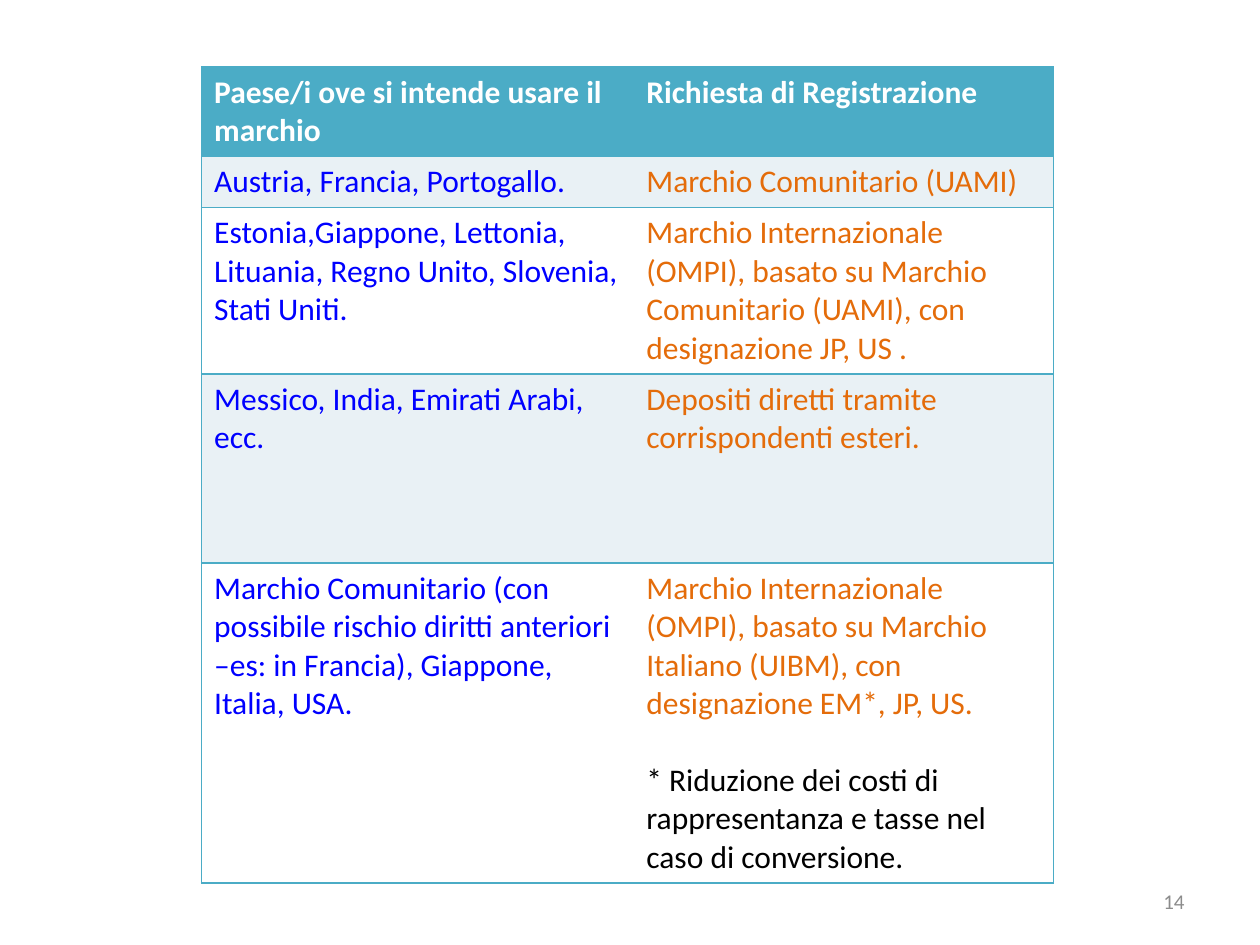
from lxml.etree import SubElement
from pptx import Presentation
from pptx.dml.color import RGBColor
from pptx.enum.text import MSO_ANCHOR, PP_ALIGN
from pptx.oxml.ns import qn
from pptx.util import Inches, Pt

TEAL = RGBColor(0x4B, 0xAC, 0xC6)
PALE = RGBColor(0xE9, 0xF1, 0xF5)
WHITE = RGBColor(0xFF, 0xFF, 0xFF)
BLACK = RGBColor(0, 0, 0)
BLUE = RGBColor(0, 0, 0xFF)
ORANGE = RGBColor(0xE4, 0x6C, 0x0A)
GREY = RGBColor(0x8C, 0x8C, 0x8C)
FONT = "Calibri"

ROWS = [
    ("Paese/i ove si intende usare il marchio", "Richiesta di Registrazione"),
    ("Austria, Francia, Portogallo.", "Marchio Comunitario (UAMI)"),
    ("Estonia,Giappone, Lettonia, Lituania, Regno Unito, Slovenia, Stati Uniti.",
     "Marchio Internazionale (OMPI), basato su Marchio Comunitario (UAMI), "
     "con designazione JP, US ."),
    ("Messico, India, Emirati Arabi, ecc.",
     "Depositi diretti tramite corrispondenti esteri."),
    ("Marchio Comunitario (con possibile rischio diritti anteriori "
     "–es: in Francia), Giappone, Italia, USA.",
     "Marchio Internazionale (OMPI), basato su Marchio Italiano (UIBM), "
     "con designazione EM*, JP, US."),
]
FOOTNOTE = "* Riduzione dei costi di rappresentanza e tasse nel caso di conversione."
PAGE_NUMBER = "14"
COLUMN_WIDTHS = [3.43, 3.33]
ROW_HEIGHTS = [0.71, 0.4, 1.32, 1.5, 2.54]


def style(paragraph, size, color, bold=False):
    font = paragraph.font
    font.name, font.size, font.bold = FONT, Pt(size), bold
    font.color.rgb = color


def set_borders(cell, open_side):
    properties = cell._tc.get_or_add_tcPr()
    for side in ("lnL", "lnR", "lnT", "lnB"):
        line = SubElement(properties, qn(f"a:{side}"), w=str(Pt(1)))
        if side == open_side:
            SubElement(line, qn("a:noFill"))
        else:
            fill = SubElement(line, qn("a:solidFill"))
            SubElement(fill, qn("a:srgbClr"), val=str(TEAL))


def add_brand_table(page):
    frame = page.shapes.add_table(
        len(ROWS), len(COLUMN_WIDTHS), Inches(1.6), Inches(0.53),
        Inches(sum(COLUMN_WIDTHS)), Inches(sum(ROW_HEIGHTS)))
    table = frame.table
    for column, width in zip(table.columns, COLUMN_WIDTHS):
        column.width = Inches(width)
    for row, height in zip(table.rows, ROW_HEIGHTS):
        row.height = Inches(height)
    for row_index, texts in enumerate(ROWS):
        header = row_index == 0
        background = TEAL if header else PALE if row_index % 2 else WHITE
        for column_index, text in enumerate(texts):
            cell = table.cell(row_index, column_index)
            set_borders(cell, ("lnR", "lnL")[column_index])
            cell.fill.solid()
            cell.fill.fore_color.rgb = background
            cell.text = text
            color = WHITE if header else (BLUE, ORANGE)[column_index]
            style(cell.text_frame.paragraphs[0], 18, color, header)
    note = table.cell(len(ROWS) - 1, 1).text_frame.add_paragraph()
    note.text = FOOTNOTE
    note.space_before = Pt(22)
    style(note, 18, BLACK)


def add_page_number(page):
    box = page.shapes.add_textbox(Inches(7.17), Inches(6.95), Inches(2.33), Inches(0.4))
    box.text_frame.word_wrap = True
    box.text_frame.vertical_anchor = MSO_ANCHOR.MIDDLE
    para = box.text_frame.paragraphs[0]
    para.text = PAGE_NUMBER
    para.alignment = PP_ALIGN.RIGHT
    style(para, 12, GREY)


def main():
    deck = Presentation()
    deck.slide_width, deck.slide_height = Inches(10), Inches(7.5)
    page = deck.slides.add_slide(deck.slide_layouts[6])
    add_brand_table(page)
    add_page_number(page)
    deck.save("out.pptx")


if __name__ == "__main__":
    main()
